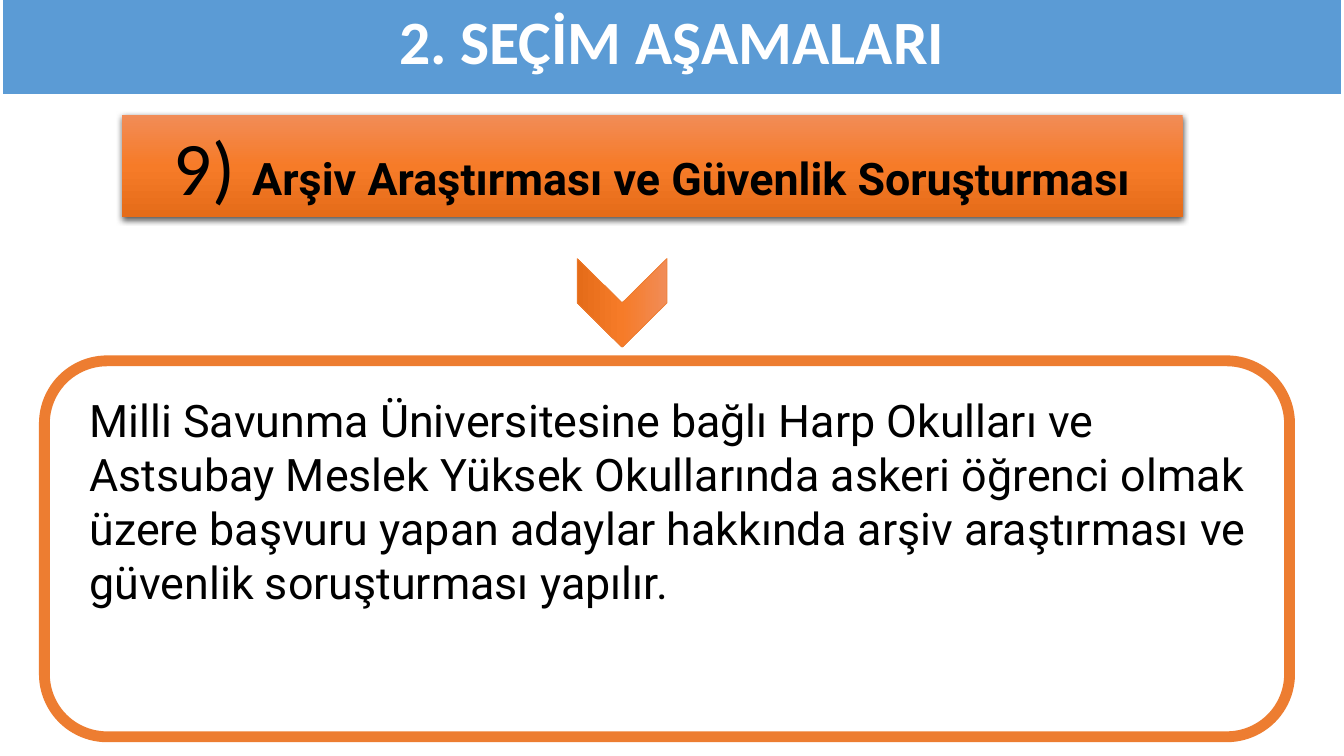
from dataclasses import dataclass

from lxml import etree
from pptx import Presentation
from pptx.dml.color import RGBColor
from pptx.enum.shapes import MSO_SHAPE
from pptx.enum.text import MSO_ANCHOR, MSO_AUTO_SIZE, PP_ALIGN
from pptx.oxml.ns import qn
from pptx.util import Inches, Pt

RECTANGLE = MSO_SHAPE.RECTANGLE
ROUNDED = MSO_SHAPE.ROUNDED_RECTANGLE
CHEVRON = MSO_SHAPE.CHEVRON
CENTER, LEFT = PP_ALIGN.CENTER, PP_ALIGN.LEFT
TOP, MIDDLE = MSO_ANCHOR.TOP, MSO_ANCHOR.MIDDLE
NO_AUTOFIT = MSO_AUTO_SIZE.NONE
TITLE_ONLY = 5

TITLE = "2. SEÇİM AŞAMALARI"
STEP_NUMBER = "9) "
STEP_NAME = "Arşiv Araştırması ve Güvenlik Soruşturması"
BODY = (
    "Milli Savunma Üniversitesine bağlı Harp Okulları ve Astsubay Meslek "
    "Yüksek Okullarında askeri öğrenci olmak üzere başvuru yapan adaylar "
    "hakkında arşiv araştırması ve güvenlik soruşturması yapılır."
)

BOXES = {
    "title": (0.02, -0.05, 13.29, 0.99),
    "step": (1.21, 1.14, 10.52, 1.01),
    "arrow": (5.73, 2.56, 0.88, 0.89),
    "frame": (0.44, 3.58, 12.35, 3.73),
    "body": (0.79, 3.85, 12, 2.26),
}


@dataclass(frozen=True)
class Theme:
    white: str = "FFFFFF"
    black: str = "000000"
    blue: str = "5B9BD5"
    orange: str = "ED7D31"
    gradient: tuple = ((0, "F18C57"), (50, "F67B28"), (100, "E56C19"))
    heading_font: str = "Calibri"
    body_font: str = "Roboto"
    title_size: int = 44
    number_size: int = 54
    text_size: int = 32


THEME = Theme()


def place(shape, name):
    shape.left, shape.top, shape.width, shape.height = map(Inches, BOXES[name])


def add_box(slide, kind, name):
    shape = slide.shapes.add_shape(kind, *map(Inches, BOXES[name]))
    shape.shadow.inherit = False
    return shape


def fill_solid(shape, color):
    shape.fill.solid()
    shape.fill.fore_color.rgb = RGBColor.from_string(color)


def outline(shape, color, width):
    shape.line.color.rgb = RGBColor.from_string(color)
    shape.line.width = Pt(width)


def fill_gradient(shape):
    shape.fill.gradient()
    shape.fill.gradient_angle = 270
    stops = shape._element.spPr.find(".//" + qn("a:gsLst"))
    for stop in list(stops):
        stops.remove(stop)
    for position, color in THEME.gradient:
        stop = etree.SubElement(stops, qn("a:gs"), pos=str(position * 1000))
        etree.SubElement(stop, qn("a:srgbClr"), val=color)


def add_shadow(shape):
    effects = shape._element.spPr.find(qn("a:effectLst"))
    shadow = etree.SubElement(
        effects, qn("a:outerShdw"), blurRad=str(Pt(4.5)), dist=str(Pt(1.5)),
        dir="5400000", algn="ctr", rotWithShape="0",
    )
    color = etree.SubElement(shadow, qn("a:srgbClr"), val=THEME.black)
    etree.SubElement(color, qn("a:alpha"), val="63000")


def write(shape, runs, alignment, anchor):
    frame = shape.text_frame
    frame.word_wrap = True
    frame.auto_size = NO_AUTOFIT
    frame.vertical_anchor = anchor
    paragraph = frame.paragraphs[0]
    paragraph.alignment = alignment
    for text, font, size, color, bold in runs:
        run = paragraph.add_run()
        run.text = text
        run.font.name = font
        run.font.size = Pt(size)
        run.font.color.rgb = RGBColor.from_string(color)
        run.font.bold = bold
    return paragraph


def build():
    presentation = Presentation()
    presentation.slide_width = Inches(13.33)
    presentation.slide_height = Inches(7.5)
    slide = presentation.slides.add_slide(presentation.slide_layouts[TITLE_ONLY])

    title = slide.shapes.title
    place(title, "title")
    fill_solid(title, THEME.blue)
    outline(title, THEME.white, 1.5)
    title_run = (TITLE, THEME.heading_font, THEME.title_size, THEME.white, True)
    write(title, [title_run], CENTER, MIDDLE).line_spacing = 0.9

    frame = add_box(slide, ROUNDED, "frame")
    fill_solid(frame, THEME.white)
    outline(frame, THEME.orange, 7.75)

    arrow = add_box(slide, CHEVRON, "arrow")
    arrow.rotation = 90
    fill_gradient(arrow)
    outline(arrow, THEME.orange, 0.5)

    step = add_box(slide, RECTANGLE, "step")
    fill_gradient(step)
    step.line.fill.background()
    add_shadow(step)
    step_runs = [
        (STEP_NUMBER, THEME.heading_font, THEME.number_size, THEME.black, False),
        (STEP_NAME, THEME.body_font, THEME.text_size, THEME.black, True),
    ]
    write(step, step_runs, CENTER, TOP)

    body = slide.shapes.add_textbox(*map(Inches, BOXES["body"]))
    body_run = (BODY, THEME.body_font, THEME.text_size, THEME.black, False)
    write(body, [body_run], LEFT, TOP)

    presentation.save("out.pptx")


if __name__ == "__main__":
    build()
